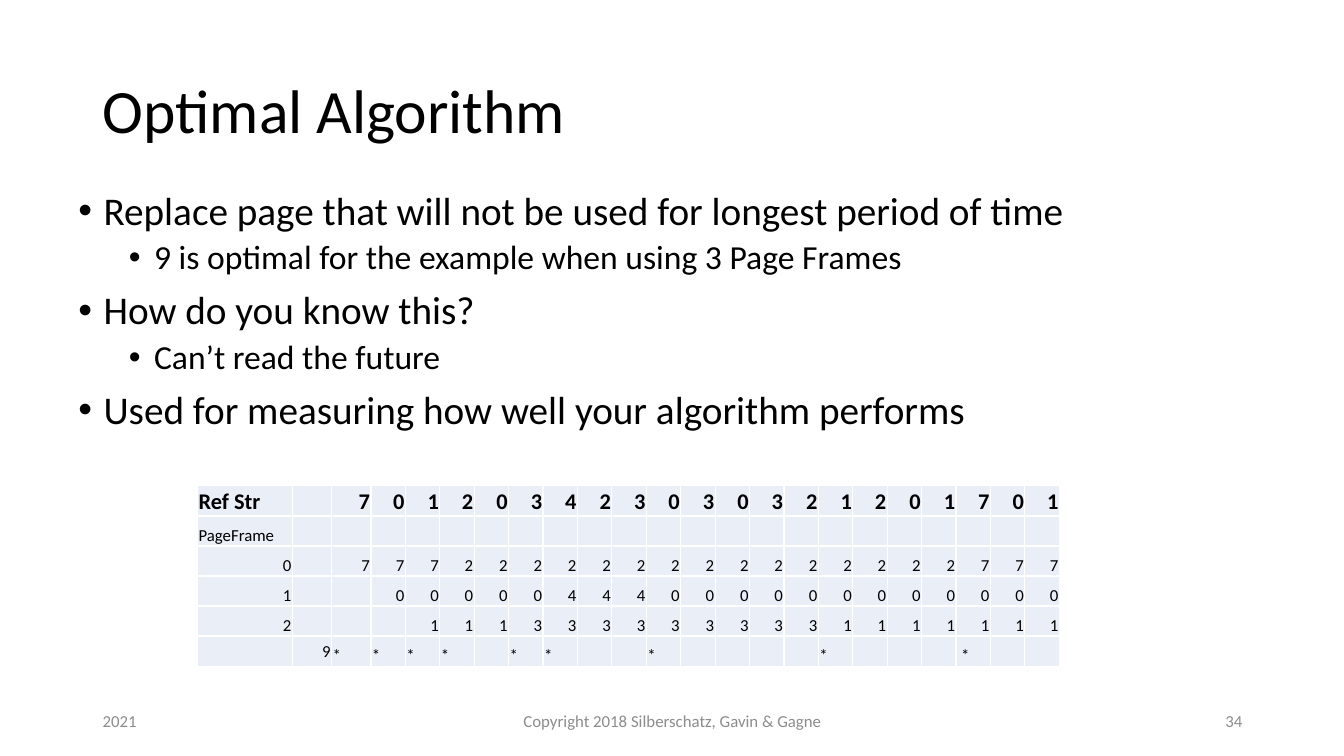
from dataclasses import dataclass

from lxml import etree
from pptx import Presentation
from pptx import util as u
from pptx.dml import color
from pptx.enum import text
from pptx.oxml import ns


@dataclass(frozen=True)
class Theme:
    font: str = "Calibri"
    ink: str = "000000"
    muted: str = "8C8C8C"
    cell: str = "EAEFF7"
    border: str = "FFFFFF"
    title: int = 44
    bullets: tuple = (28, 24)
    table_head: int = 16
    small: int = 12


THEME = Theme()
ALIGN = text.PP_ALIGN
ANCHOR = text.MSO_ANCHOR

BULLETS = [
    (0, "Replace page that will not be used for longest period of time"),
    (1, "9 is optimal for the example when using 3 Page Frames"),
    (0, "How do you know this?"),
    (1, "Can’t read the future"),
    (0, "Used for measuring how well your algorithm performs"),
]

# One character per step of the reference string; a dot is an empty cell
REFERENCES = "701203423030321201701"
FRAMES = [
    "777222222222222222777",
    ".00000444000000000000",
    "..1113333333331111111",
]
FAULTS = "****.**..*....*...*.."
FAULT_COUNT = "9"


def add_element(parent, tag, **attributes):
    return etree.SubElement(parent, ns.qn(tag), attributes)


def style_paragraph(para, size, ink=THEME.ink, bold=False, align=ALIGN.LEFT):
    para.alignment = align
    for span in para.runs:
        span.font.name = THEME.font
        span.font.size = u.Pt(size)
        span.font.bold = bold
        span.font.color.rgb = color.RGBColor.from_string(ink)


def add_text_box(page, box, anchor):
    frame = page.shapes.add_textbox(*map(u.Inches, box)).text_frame
    frame.word_wrap = True
    frame.vertical_anchor = anchor
    return frame


def add_title(page, box):
    frame = add_text_box(page, box, ANCHOR.MIDDLE)
    frame.text = "Optimal Algorithm"
    frame.paragraphs[0].line_spacing = 0.9
    style_paragraph(frame.paragraphs[0], THEME.title)


def add_bullets(page, box):
    frame = add_text_box(page, box, ANCHOR.TOP)
    frame.text = "\n".join(wording for _, wording in BULLETS)
    for index, (para, (level, _)) in enumerate(zip(frame.paragraphs, BULLETS)):
        para.level = level
        properties = para._p.get_or_add_pPr()
        properties.set("marL", str(u.Inches(0.25 + 0.5 * level)))
        properties.set("indent", str(u.Inches(-0.25)))
        add_element(properties, "a:buFont", typeface="Arial")
        add_element(properties, "a:buChar", char="•")
        tabs = add_element(properties, "a:tabLst")
        add_element(tabs, "a:tab", pos=str(u.Inches(2.07)), algn="l")
        para.line_spacing = 0.9
        para.space_before = u.Pt((10, 5)[level] if index else 0)
        style_paragraph(para, THEME.bullets[level])


def fill_cell(cell, wording, size, bold, align, anchor):
    cell.margin_left = cell.margin_right = cell.margin_top = u.Inches(0.01)
    cell.margin_bottom = 0
    cell.vertical_anchor = anchor
    for side in ("a:lnL", "a:lnR", "a:lnT", "a:lnB"):
        line = add_element(cell._tc.get_or_add_tcPr(), side, w=str(u.Pt(1)))
        add_element(add_element(line, "a:solidFill"), "a:srgbClr", val=THEME.border)
    cell.fill.solid()
    cell.fill.fore_color.rgb = color.RGBColor.from_string(THEME.cell)
    para = cell.text_frame.paragraphs[0]
    if wording:
        para.text = wording
        style_paragraph(para, size, bold=bold, align=align)
    else:
        # Keeps an empty cell from stretching its row
        add_element(para._p, "a:endParaRPr", sz=str(size * 100))


def add_page_table(page, box):
    steps = len(REFERENCES)
    rows = [["Ref Str", "", *REFERENCES], ["PageFrame"] + [""] * (steps + 1)]
    rows += [[str(number), "", *pages] for number, pages in enumerate(FRAMES)]
    rows.append(["", FAULT_COUNT, *FAULTS])

    grid = page.shapes.add_table(len(rows), steps + 2, *map(u.Inches, box)).table
    grid.first_row = grid.horz_banding = False
    label, wide = 0.94, 0.39
    step = (box[2] - label - 2 * wide) / (steps - 1)
    for column, width in zip(grid.columns, [label, wide, wide] + [step] * (steps - 1)):
        column.width = u.Inches(width)
    for row in grid.rows:
        row.height = u.Inches(box[3] / len(rows))

    for r, row in enumerate(rows):
        for c, wording in enumerate(row):
            fill_cell(
                grid.cell(r, c),
                wording.replace(".", ""),
                size=THEME.small if r else THEME.table_head,
                bold=r == 0,
                align=ALIGN.RIGHT if wording.isdigit() else ALIGN.LEFT,
                anchor=ANCHOR.MIDDLE if wording == FAULT_COUNT else ANCHOR.BOTTOM,
            )
    # The last fault mark stands slightly inside its cell
    last_fault = FAULTS.rindex("*") + 2
    grid.cell(len(rows) - 1, last_fault).margin_left = u.Inches(0.05)


def add_footer(page, box):
    left, top, width, height = box
    side, middle = 3, 4.5
    parts = [
        ("2021", left, side, ALIGN.LEFT),
        ("Copyright 2018 Silberschatz, Gavin & Gagne",
         left + (width - middle) / 2, middle, ALIGN.CENTER),
        ("34", left + width - side, side, ALIGN.RIGHT),
    ]
    for wording, x, part_width, align in parts:
        frame = add_text_box(page, (x, top, part_width, height), ANCHOR.MIDDLE)
        frame.text = wording
        style_paragraph(frame.paragraphs[0], THEME.small, THEME.muted, align=align)


def main():
    deck = Presentation()
    deck.slide_width, deck.slide_height = u.Inches(13.33), u.Inches(7.5)
    page = deck.slides.add_slide(deck.slide_layouts[6])
    add_title(page, (0.92, 0.4, 11.5, 1.45))
    add_bullets(page, (0.68, 1.85, 11.5, 4.76))
    add_footer(page, (0.92, 6.95, 11.5, 0.4))
    add_page_table(page, (1.96, 4.82, 8.55, 1.79))
    deck.save("out.pptx")


if __name__ == "__main__":
    main()
